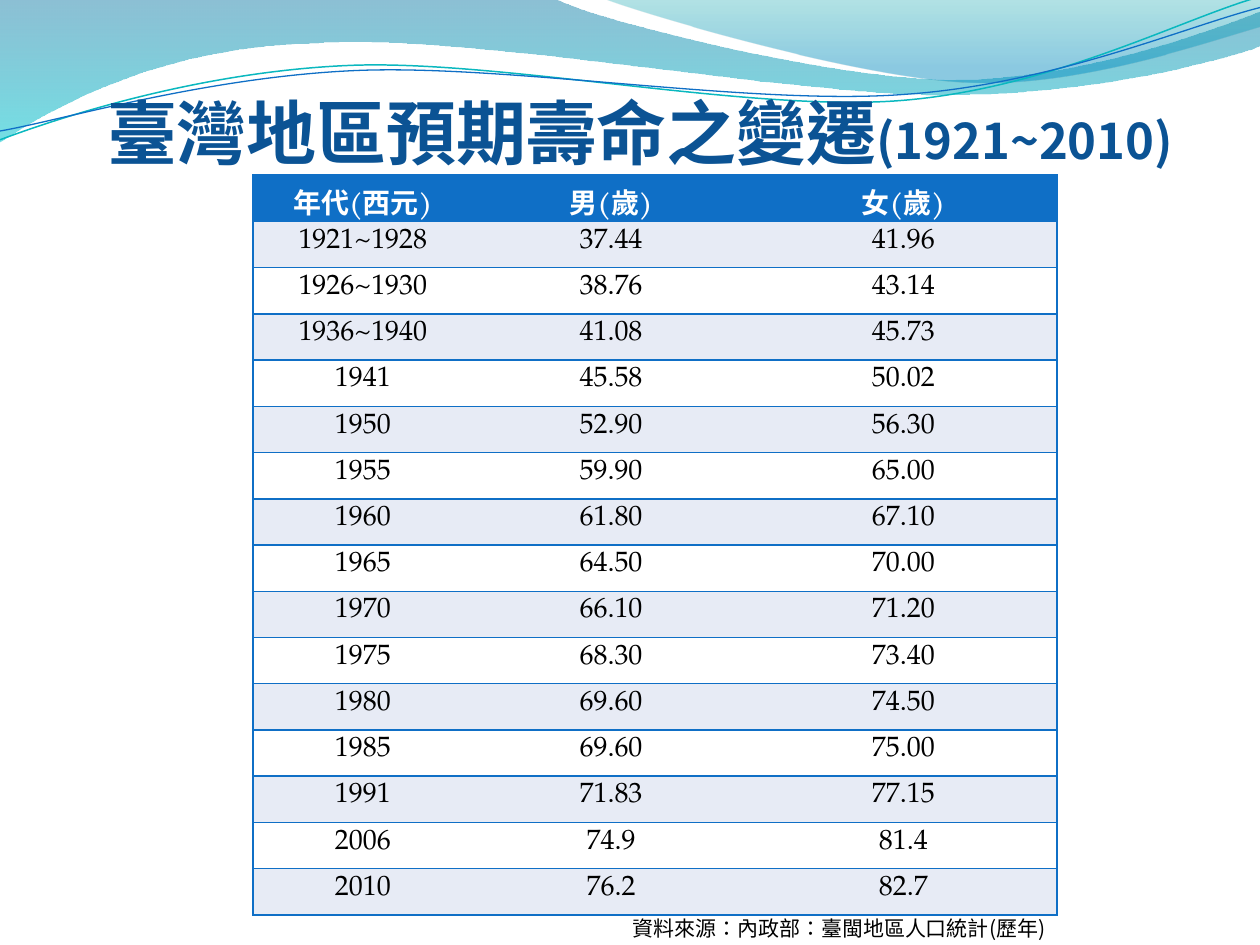
from dataclasses import dataclass

from lxml import etree
from pptx import Presentation
from pptx import util as u
from pptx.dml.color import RGBColor
from pptx.enum import lang, text
from pptx.oxml import ns, parse_xml

SANS, SERIF = "Noto Sans CJK SC", "TeX Gyre Pagella"
BLUE, TEAL, TITLE_BLUE = "0F6FC6", "0AB8BF", "0B5394"
WHITE, BLACK, BAND = "FFFFFF", "000000", "E7EBF5"
NO_TABLE_STYLE = "{2D5ABB26-0587-4C30-8999-92F81FD0307C}"

Point = tuple[float, float]
Segment = tuple[Point, ...]


@dataclass
class Stop:
    position: float
    color: str
    opacity: int


@dataclass
class Wave:
    """A filled band; a segment is one line end, or two controls and an end."""
    start: Point
    segments: list[Segment]
    stops: tuple[Stop, Stop]


@dataclass
class Strand:
    start: Point
    segments: list[Segment]
    color: str
    width: float


@dataclass
class Span:
    words: str
    size: float


WAVES = [
    Wave((0, 0), [
        ((4.4, -0.01),),
        ((4.76, 0.17), (6.64, 0.63), (7.58, 0.63)),
        ((8.53, 0.63), (9.58, 0.26), (10, 0.09)),
        ((10.01, 0.36),),
        ((9.83, 0.44), (8.7, 0.76), (7.46, 0.75)),
        ((6.22, 0.75), (3.82, 0.28), (2.57, 0.34)),
        ((1.29, 0.36), (0.46, 0.83), (-0.01, 1.13)),
    ], (Stop(0, "0074A1", 45), Stop(1, "00C6CF", 55))),
    Wave((4.79, -0.01), [
        ((5.09, 0.11), (6.82, 0.62), (7.69, 0.65)),
        ((8.56, 0.69), (9.61, 0.32), (10, 0.21)),
        ((10, 0),),
    ], (Stop(0, "00A1A9", 30), Stop(0.8, "008BBF", 45))),
]
STRANDS = [
    Strand((0, 1.11), [
        ((0.48, 0.93), (1.58, 0.57), (2.77, 0.52)),
        ((3.95, 0.47), (5.93, 0.89), (7.13, 0.8)),
        ((8.33, 0.71), (9.38, 0.15), (9.98, -0.02)),
    ], TEAL, 0.85),
    Strand((0, 1.04), [
        ((0.47, 0.96), (1.64, 0.61), (2.83, 0.56)),
        ((4.03, 0.51), (5.97, 0.84), (7.17, 0.75)),
        ((8.36, 0.67), (9.41, 0.21), (10, 0.06)),
    ], BLUE, 0.75),
]
LIFE_EXPECTANCY = [
    ("年代(西元)", "男(歲)", "女(歲)"),
    ("1921~1928", "37.44", "41.96"),
    ("1926~1930", "38.76", "43.14"),
    ("1936~1940", "41.08", "45.73"),
    ("1941", "45.58", "50.02"),
    ("1950", "52.90", "56.30"),
    ("1955", "59.90", "65.00"),
    ("1960", "61.80", "67.10"),
    ("1965", "64.50", "70.00"),
    ("1970", "66.10", "71.20"),
    ("1975", "68.30", "73.40"),
    ("1980", "69.60", "74.50"),
    ("1985", "69.60", "75.00"),
    ("1991", "71.83", "77.15"),
    ("2006", "74.9", "81.4"),
    ("2010", "76.2", "82.7"),
]
COLUMN_WIDTHS = (1.74, 2.2, 2.44)
ROW_HEIGHT = 0.35


def rgb(color: str) -> RGBColor:
    return RGBColor.from_string(color)


def add_outline(page, item: Wave | Strand, close: bool):
    """Build the outline through its anchors, then bend the curved segments."""
    anchors = [segment[-1] for segment in item.segments]
    builder = page.shapes.build_freeform(*map(u.Inches, item.start))
    builder.add_line_segments([tuple(map(u.Inches, p)) for p in anchors], close=close)
    shape = builder.convert_to_shape()
    shape.shadow.inherit = False
    left = min(x for x, _ in [item.start, *anchors])
    top = min(y for _, y in [item.start, *anchors])
    lines = list(shape.element.spPr.iter(ns.qn("a:lnTo")))
    for line, segment in zip(lines, item.segments):
        if len(segment) == 1:
            continue
        line.tag = ns.qn("a:cubicBezTo")
        for index, (x, y) in enumerate(segment[:-1]):
            control = etree.Element(ns.qn("a:pt"), x=str(u.Inches(x - left)),
                                    y=str(u.Inches(y - top)))
            line.insert(index, control)
    return shape


def add_wave(page, wave: Wave) -> None:
    shape = add_outline(page, wave, close=True)
    shape.line.fill.background()
    shape.fill.gradient()
    shape.fill.gradient_angle = 270
    for target, stop in zip(shape.fill.gradient_stops, wave.stops):
        target.color.rgb = rgb(stop.color)
        target.position = stop.position
    colors = list(shape.element.spPr.iter(ns.qn("a:srgbClr")))
    for color, stop in zip(colors, wave.stops):
        color.append(parse_xml(
            f'<a:alpha {ns.nsdecls("a")} val="{stop.opacity * 1000}"/>'))


def add_strand(page, strand: Strand) -> None:
    shape = add_outline(page, strand, close=False)
    shape.fill.background()
    shape.line.color.rgb = rgb(strand.color)
    shape.line.width = u.Pt(strand.width)


def add_text(page, place: tuple[float, float, float, float], spans: list[Span],
             color: str, bold: bool = False):
    box = page.shapes.add_textbox(*map(u.Inches, place))
    box.text_frame.word_wrap = True
    para = box.text_frame.paragraphs[0]
    para.font.name, para.font.bold = SANS, bold
    para.font.color.rgb = rgb(color)
    for span in spans:
        run = para.add_run()
        run.text = span.words
        run.font.size = u.Pt(span.size)
        run.font.language_id = lang.MSO_LANGUAGE_ID.TRADITIONAL_CHINESE
        run._r.get_or_add_rPr().append(parse_xml(
            f'<a:ea {ns.nsdecls("a")} typeface="{SANS}"/>'))
    return box


def add_borders(cell, sides: str) -> None:
    properties = cell._tc.get_or_add_tcPr()
    for index, side in enumerate(sides):
        properties.insert(index, parse_xml(
            f'<a:ln{side} {ns.nsdecls("a")} w="{u.Pt(1)}"><a:solidFill>'
            f'<a:srgbClr val="{BLUE}"/></a:solidFill></a:ln{side}>'))


def add_life_table(page) -> None:
    rows, columns = len(LIFE_EXPECTANCY), len(COLUMN_WIDTHS)
    frame = page.shapes.add_table(rows, columns, u.Inches(2.01), u.Inches(1.39),
                                  u.Inches(sum(COLUMN_WIDTHS)),
                                  u.Inches(ROW_HEIGHT * rows))
    next(frame.element.iter(ns.qn("a:tableStyleId"))).text = NO_TABLE_STYLE
    table = frame.table
    for column, width in zip(table.columns, COLUMN_WIDTHS):
        column.width = u.Inches(width)
    for r, values in enumerate(LIFE_EXPECTANCY):
        header = r == 0
        table.rows[r].height = u.Inches(ROW_HEIGHT)
        for c, value in enumerate(values):
            cell = table.cell(r, c)
            cell.text = value
            cell.fill.solid()
            cell.fill.fore_color.rgb = rgb(BLUE if header else BAND if r % 2 else WHITE)
            para = cell.text_frame.paragraphs[0]
            para.alignment = text.PP_ALIGN.CENTER
            para.font.name, para.font.size, para.font.bold = SERIF, u.Pt(16), header
            para.font.color.rgb = rgb(WHITE if header else BLACK)
            add_borders(cell, {0: "LTB", columns - 1: "RTB"}.get(c, "TB"))


def main() -> None:
    deck = Presentation()
    deck.slide_width, deck.slide_height = u.Inches(10), u.Inches(7.5)
    page = deck.slides.add_slide(deck.slide_layouts[6])
    for wave in WAVES:
        add_wave(page, wave)
    for strand in STRANDS:
        add_strand(page, strand)
    title = add_text(page, (0.58, 0.13, 9, 1.25),
                     [Span("臺灣地區預期壽命之變遷", 40), Span("(1921~2010)", 28)],
                     TITLE_BLUE, bold=True).text_frame
    title.margin_left = title.margin_right = title.margin_bottom = 0
    title.vertical_anchor = text.MSO_ANCHOR.BOTTOM
    title.paragraphs[0].alignment = text.PP_ALIGN.CENTER
    add_life_table(page)
    source = add_text(page, (4.92, 7.22, 4.65, 0.3),
                      [Span("資料來源：內政部：臺閩地區人口統計(歷年)", 12)], BLACK)
    source.text_frame.auto_size = text.MSO_AUTO_SIZE.SHAPE_TO_FIT_TEXT
    deck.save("out.pptx")


if __name__ == "__main__":
    main()
